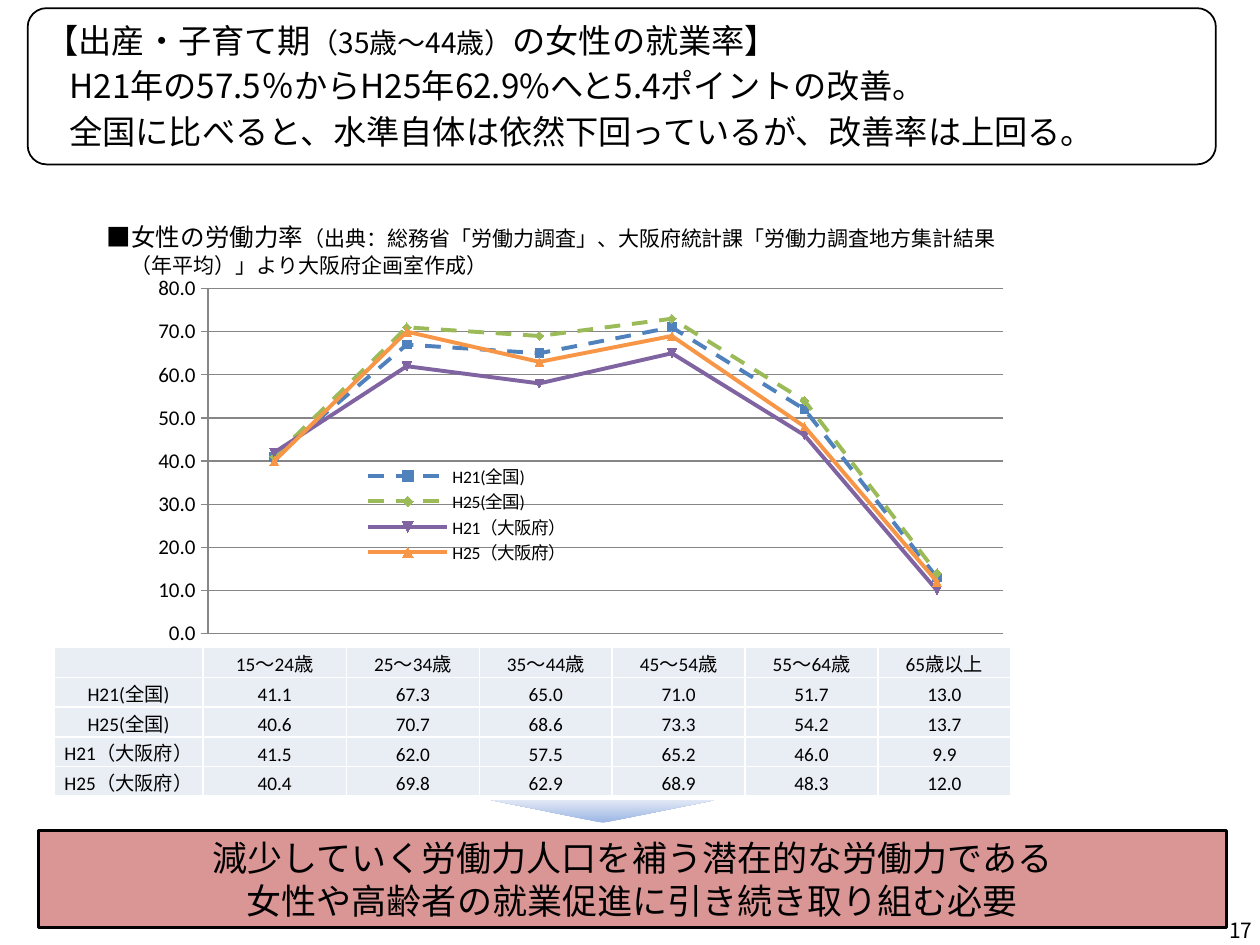
from pptx import Presentation
from pptx.chart.data import CategoryChartData
from pptx.dml.color import RGBColor
from pptx.enum.chart import XL_CHART_TYPE, XL_LEGEND_POSITION, XL_TICK_MARK
from pptx.enum.dml import MSO_LINE
from pptx.enum.shapes import MSO_SHAPE
from pptx.enum.text import MSO_ANCHOR, PP_ALIGN
from pptx.oxml.ns import qn
from pptx.util import Inches, Pt
from lxml import etree

BLACK = RGBColor(0x00, 0x00, 0x00)
WHITE = RGBColor(0xFF, 0xFF, 0xFF)
GREY = RGBColor(0x86, 0x86, 0x86)
ROSE = RGBColor(0xD9, 0x96, 0x94)
CELL = RGBColor(0xE9, 0xED, 0xF4)
ARROW_DARK = RGBColor(0x9A, 0xB5, 0xE4)
ARROW_LIGHT = RGBColor(0xE1, 0xE8, 0xF5)
BLUE = RGBColor(0x4F, 0x81, 0xBD)
GREEN = RGBColor(0x9B, 0xBB, 0x59)
PURPLE = RGBColor(0x80, 0x64, 0xA2)
ORANGE = RGBColor(0xF7, 0x96, 0x46)

LEFT, CENTER, RIGHT, JUSTIFY = PP_ALIGN.LEFT, PP_ALIGN.CENTER, PP_ALIGN.RIGHT, PP_ALIGN.JUSTIFY
MIDDLE, BOTTOM = MSO_ANCHOR.MIDDLE, MSO_ANCHOR.BOTTOM
DASH, SOLID = MSO_LINE.DASH, MSO_LINE.SOLID
RECTANGLE, ROUNDED, TRIANGLE = (
    MSO_SHAPE.RECTANGLE, MSO_SHAPE.ROUNDED_RECTANGLE, MSO_SHAPE.ISOSCELES_TRIANGLE)
JAPANESE, LATIN = "Noto Sans CJK JP", "Calibri"

AGES = ["15～24歳", "25～34歳", "35～44歳", "45～54歳", "55～64歳", "65歳以上"]
RATES = [
    ("H21(全国)", [41.1, 67.3, 65.0, 71.0, 51.7, 13.0], BLUE, DASH),
    ("H25(全国)", [40.6, 70.7, 68.6, 73.3, 54.2, 13.7], GREEN, DASH),
    ("H21（大阪府）", [41.5, 62.0, 57.5, 65.2, 46.0, 9.9], PURPLE, SOLID),
    ("H25（大阪府）", [40.4, 69.8, 62.9, 68.9, 48.3, 12.0], ORANGE, SOLID),
]


def write(para, spans, align=LEFT, font=JAPANESE, spacing=None, margin=0, indent=0):
    """Fill a paragraph with (text, size) spans."""
    para.alignment = align
    if spacing:
        para.line_spacing = Pt(spacing)
    if margin:
        properties = para._p.get_or_add_pPr()
        properties.set("marL", str(Inches(margin)))
        properties.set("indent", str(Inches(indent)))
    for text, size in spans:
        if not text:
            para._p.get_or_add_endParaRPr().set("sz", str(size * 100))
            continue
        span = para.add_run()
        span.text = text
        span.font.size = Pt(size)
        span.font.name = font
        span.font.color.rgb = BLACK
        east_asian = etree.SubElement(span._r.get_or_add_rPr(), qn("a:ea"))
        east_asian.set("typeface", JAPANESE)


def place(part, index, x, y, width, height, inner=False):
    """Give a chart part a manual layout in shares of the chart."""
    for old in part.findall(qn("c:layout")):
        part.remove(old)
    layout = etree.Element(qn("c:layout"))
    manual = etree.SubElement(layout, qn("c:manualLayout"))
    settings = [("layoutTarget", "inner")] if inner else []
    settings += [("xMode", "edge"), ("yMode", "edge"),
                 ("x", x), ("y", y), ("w", width), ("h", height)]
    for tag, value in settings:
        etree.SubElement(manual, qn(f"c:{tag}")).set("val", str(value))
    part.insert(index, layout)


class Page:
    """Draws styled elements on a slide with a grid of 100 columns and 75 rows."""

    def __init__(self, deck):
        self.slide = deck.slides.add_slide(deck.slide_layouts[6])
        self.column = deck.slide_width / 100
        self.row = deck.slide_height / 75

    def frame(self, x, y, width, height):
        return (int(x * self.column), int(y * self.row),
                int(width * self.column), int(height * self.row))

    def shape(self, kind, *area, fill=None, line=None):
        box = self.slide.shapes.add_shape(kind, *self.frame(*area))
        box.shadow.inherit = False
        if fill:
            box.fill.solid()
            box.fill.fore_color.rgb = fill
        else:
            box.fill.background()
        if line:
            box.line.color.rgb = BLACK
            box.line.width = Pt(line)
        else:
            box.line.fill.background()
        return box

    def text(self, *area, wrap=True):
        box = self.slide.shapes.add_textbox(*self.frame(*area))
        box.text_frame.word_wrap = wrap
        return box

    def arrow(self, *area):
        box = self.shape(TRIANGLE, *area)
        box.rotation = 180
        box.fill.gradient()
        box.fill.gradient_angle = 270
        for stop, color in zip(box.fill.gradient_stops, (ARROW_DARK, ARROW_LIGHT)):
            stop.color.rgb = color

    def table(self, rows, widths, *area):
        table = self.slide.shapes.add_table(len(rows), len(widths), *self.frame(*area)).table
        for column, width in zip(table.columns, widths):
            column.width = int(width * self.column)
        for r, row in enumerate(rows):
            for c, text in enumerate(row):
                self.cell(table.cell(r, c), text, MIDDLE if r and not c else BOTTOM)

    def cell(self, cell, text, anchor):
        cell.vertical_anchor = anchor
        cell.margin_left = cell.margin_top = cell.margin_right = Inches(0.01)
        cell.margin_bottom = 0
        write(cell.text_frame.paragraphs[0], [(text, 11)], align=CENTER, font=LATIN)
        properties = cell._tc.get_or_add_tcPr()
        for side in ("lnL", "lnR", "lnT", "lnB"):
            border = etree.SubElement(properties, qn(f"a:{side}"), w=str(Pt(1)))
            paint = etree.SubElement(border, qn("a:solidFill"))
            etree.SubElement(paint, qn("a:srgbClr"), val=str(WHITE))
        cell.fill.solid()
        cell.fill.fore_color.rgb = CELL

    def line_chart(self, rates, *area):
        data = CategoryChartData(number_format="0")
        data.categories = [str(number + 1) for number in range(len(AGES))]
        for name, values, _, _ in rates:
            data.add_series(name, [round(value) for value in values])
        chart = self.slide.shapes.add_chart(
            XL_CHART_TYPE.LINE_MARKERS, *self.frame(*area), data).chart
        chart.has_title = False
        chart.font.size = Pt(10)
        chart.font.name = LATIN
        chart.font.color.rgb = BLACK
        chart.category_axis.visible = False
        axis = chart.value_axis
        axis.minimum_scale, axis.maximum_scale, axis.major_unit = 0, 80, 10
        axis.major_tick_mark = XL_TICK_MARK.OUTSIDE
        axis.tick_labels.font.size = Pt(12)
        axis.tick_labels.number_format = "0.0"
        axis.tick_labels.number_format_is_linked = False
        for line in (axis.format.line, axis.major_gridlines.format.line):
            line.color.rgb = GREY
        for series, (_, _, color, dash) in zip(chart.plots[0].series, rates):
            series.smooth = False
            series.format.line.color.rgb = color
            series.format.line.width = Pt(2.25)
            series.format.line.dash_style = dash
            series.marker.format.fill.solid()
            series.marker.format.fill.fore_color.rgb = color
            series.marker.format.line.color.rgb = color
        chart.has_legend = True
        chart.legend.position = XL_LEGEND_POSITION.RIGHT
        chart.legend.include_in_layout = False
        place(chart.legend._element, 1, 0.24, 0.5, 0.24, 0.27)
        place(chart._chartSpace.chart.plotArea, 0, 0.076, 0.04, 0.872, 0.91, inner=True)


def main():
    deck = Presentation()
    deck.slide_width, deck.slide_height = Inches(10), Inches(7.5)
    page = Page(deck)

    banner = page.shape(RECTANGLE, 3.05, 65.9, 94.3, 7.7, fill=ROSE, line=1.5).text_frame
    write(banner.paragraphs[0], [("減少していく労働力人口を補う潜在的な労働力である", 20)],
          align=CENTER, spacing=24.5)
    write(banner.add_paragraph(), [("女性や高齢者の就業促進に引き続き取り組む必要", 20)],
          align=CENTER, spacing=24.5)

    rows = [["", *AGES]] + [[name, *(f"{v:.1f}" for v in values)] for name, values, _, _ in RATES]
    page.table(rows, [11.8, 11.4] + [10.55] * 5, 4.3, 51.4, 75.9, 11.8)

    summary = page.shape(ROUNDED, 2.2, 0.65, 94.3, 12.4, line=1)
    summary.adjustments[0] = 0.12
    frame = summary.text_frame
    frame.margin_bottom = Inches(0.11)
    write(frame.paragraphs[0],
          [("【出産・子育て期", 19), ("（35歳～44歳）", 16), ("の女性の就業率】", 19)],
          align=JUSTIFY, spacing=26, margin=0.3, indent=-0.3)
    for text in ("H21年の57.5％からH25年62.9%へと5.4ポイントの改善。",
                 "全国に比べると、水準自体は依然下回っているが、改善率は上回る。"):
        write(frame.add_paragraph(), [(text, 19)], align=JUSTIFY, spacing=26, margin=0.19)

    page.line_chart(RATES, 11, 21.7, 72.4, 30.1)

    caption = page.text(7.5, 17.35, 75.2, 5.4).text_frame
    source = "（出典：総務省「労働力調査」、大阪府統計課「労働力調査地方集計結果（年平均）」より大阪府企画室作成）"
    write(caption.paragraphs[0], [("■女性の労働力率", 14), (source, 12)],
          spacing=15, margin=0.19, indent=-0.19)

    page.arrow(39, 63.5, 17.7, 1.8)

    number = page.text(96.3, 72.3, 4.1, 3, wrap=False).text_frame
    write(number.paragraphs[0], [("17", 12)], align=RIGHT, spacing=14.5)

    deck.save("out.pptx")


if __name__ == "__main__":
    main()
